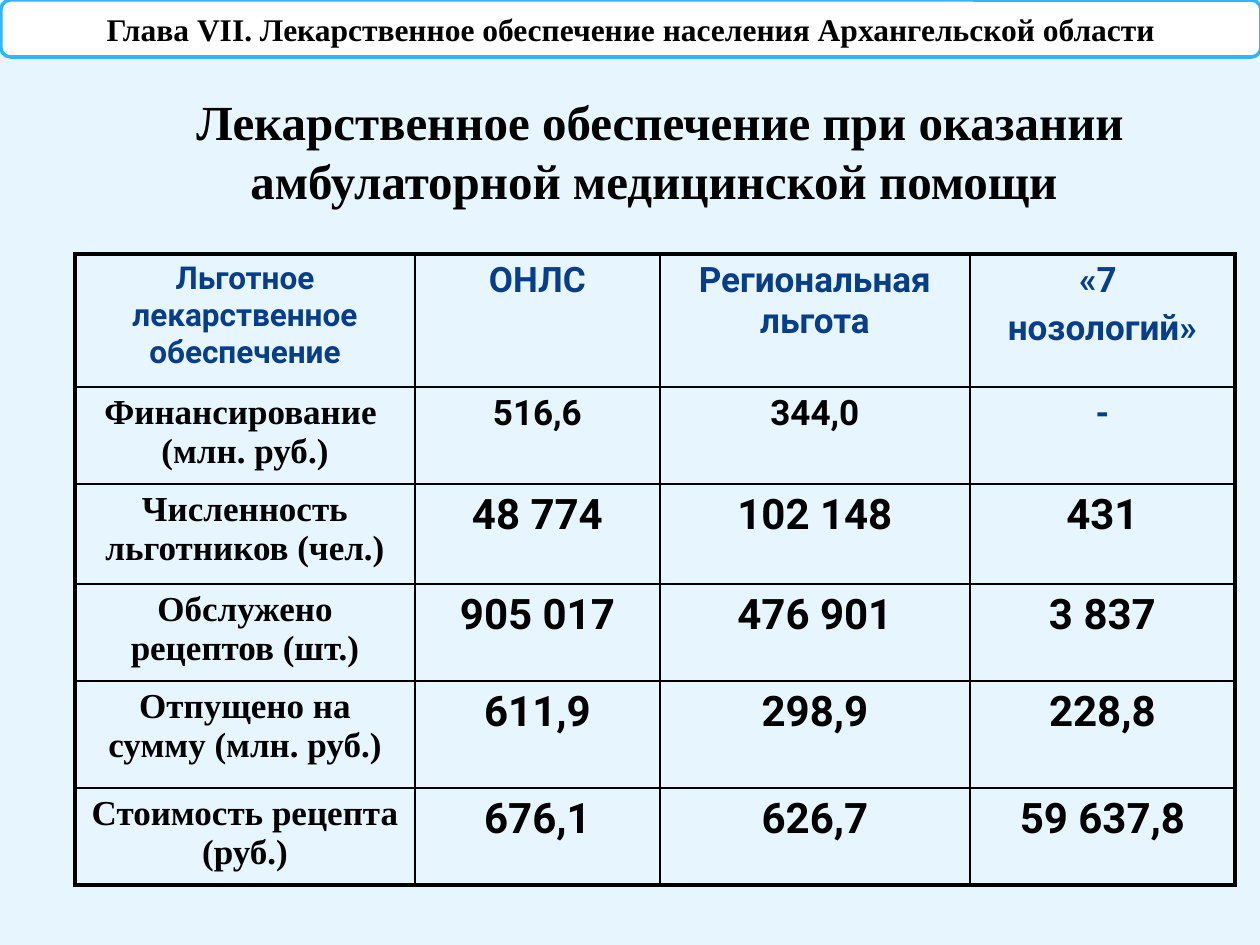
from lxml import etree
from pptx import Presentation
from pptx.dml.color import RGBColor
from pptx.enum.shapes import MSO_SHAPE
from pptx.enum.text import MSO_ANCHOR, PP_ALIGN
from pptx.oxml.ns import qn
from pptx.util import Emu, Pt

ROUNDED = MSO_SHAPE.ROUNDED_RECTANGLE
MIDDLE = MSO_ANCHOR.MIDDLE
CENTER = PP_ALIGN.CENTER

SERIF, SANS = "Times New Roman", "Roboto"
BLACK, NAVY, WHITE, SKY, PALE = "000000", "073E87", "FFFFFF", "31B6FD", "E6F5FE"
THIN, THICK = 1, 2.25

CHAPTER = "Глава VII. Лекарственное обеспечение населения Архангельской области"
TITLE = "Лекарственное обеспечение при оказании амбулаторной медицинской помощи "
HEADINGS = ["Льготное лекарственное обеспечение", "ОНЛС", "Региональная льгота", "«7 \nнозологий»"]
RECORDS = [
    ["Финансирование  (млн. руб.)", "516,6", "344,0", "-"],
    ["Численность льготников (чел.)", "48 774", "102 148", "431"],
    ["Обслужено рецептов (шт.)", "905 017", "476 901", "3 837"],
    ["Отпущено на сумму (млн. руб.)", "611,9", "298,9", "228,8"],
    ["Стоимость рецепта (руб.)", "676,1", "626,7", "59 637,8"],
]
COLUMN_WIDTHS = [340, 245, 310, 265]
ROW_HEIGHTS = [133, 97, 100, 97, 107, 97]


def px(value):
    return Emu(round(value * 914400 / 126))


def color(value):
    return RGBColor.from_string(value)


def write(frame, text, *, size, font=SERIF, ink=BLACK):
    """Fill a text frame with bold centred text, one paragraph per line."""
    frame.word_wrap = True
    for index, line in enumerate(text.split("\n")):
        para = frame.add_paragraph() if index else frame.paragraphs[0]
        para.alignment = CENTER
        if index:
            para.space_before = Pt(size * 0.2)
        span = para.add_run()
        span.text = line
        span.font.name = font
        span.font.size = Pt(size)
        span.font.bold = True
        span.font.color.rgb = color(ink)


def set_borders(cell, widths):
    """Draw black borders; widths are points for left, right, top, bottom."""
    properties = cell._tc.get_or_add_tcPr()
    for index, (side, width) in enumerate(zip("LRTB", widths)):
        border = etree.Element(qn(f"a:ln{side}"), w=str(Pt(width)))
        fill = etree.SubElement(border, qn("a:solidFill"))
        etree.SubElement(fill, qn("a:srgbClr"), val=BLACK)
        properties.insert(index, border)


def cell_format(row, column):
    if row == 0:
        return {"size": 20 if column else 18, "font": SANS, "ink": NAVY}
    if column == 0:
        return {"size": 20}
    if row == 1:
        return {"size": 20, "font": SANS, "ink": NAVY if column == 3 else BLACK}
    return {"size": 24, "font": SANS}


def add_title(page):
    box = page.shapes.add_textbox(px(84), px(91), px(1152), px(118))
    box.text_frame.vertical_anchor = MIDDLE
    write(box.text_frame, TITLE, size=28)


def add_supply_table(page):
    rows = [HEADINGS] + RECORDS
    last_row, last_column = len(rows) - 1, len(HEADINGS) - 1
    table = page.shapes.add_table(
        len(rows), len(HEADINGS), px(75), px(254),
        px(sum(COLUMN_WIDTHS)), px(sum(ROW_HEIGHTS))).table
    table.first_row = table.horz_banding = False
    for column, width in zip(table.columns, COLUMN_WIDTHS):
        column.width = px(width)
    for row, height in zip(table.rows, ROW_HEIGHTS):
        row.height = px(height)
    for r, texts in enumerate(rows):
        for c, text in enumerate(texts):
            cell = table.cell(r, c)
            cell.fill.background()
            write(cell.text_frame, text, **cell_format(r, c))
            outer = (c == 0, c == last_column, r == 0, r == last_row)
            set_borders(cell, [THICK if edge else THIN for edge in outer])


def add_chapter_bar(page):
    bar = page.shapes.add_shape(ROUNDED, px(1), px(0), px(1260), px(57))
    bar.shadow.inherit = False
    bar.fill.solid()
    bar.fill.fore_color.rgb = color(WHITE)
    bar.line.color.rgb = color(SKY)
    bar.line.width = Pt(2)
    bar.text_frame.vertical_anchor = MIDDLE
    write(bar.text_frame, CHAPTER, size=18)


def main():
    deck = Presentation()
    deck.slide_width, deck.slide_height = px(1260), px(945)
    page = deck.slides.add_slide(deck.slide_layouts[6])
    page.background.fill.solid()
    page.background.fill.fore_color.rgb = color(PALE)
    add_title(page)
    add_supply_table(page)
    add_chapter_bar(page)
    deck.save("out.pptx")


if __name__ == "__main__":
    main()
